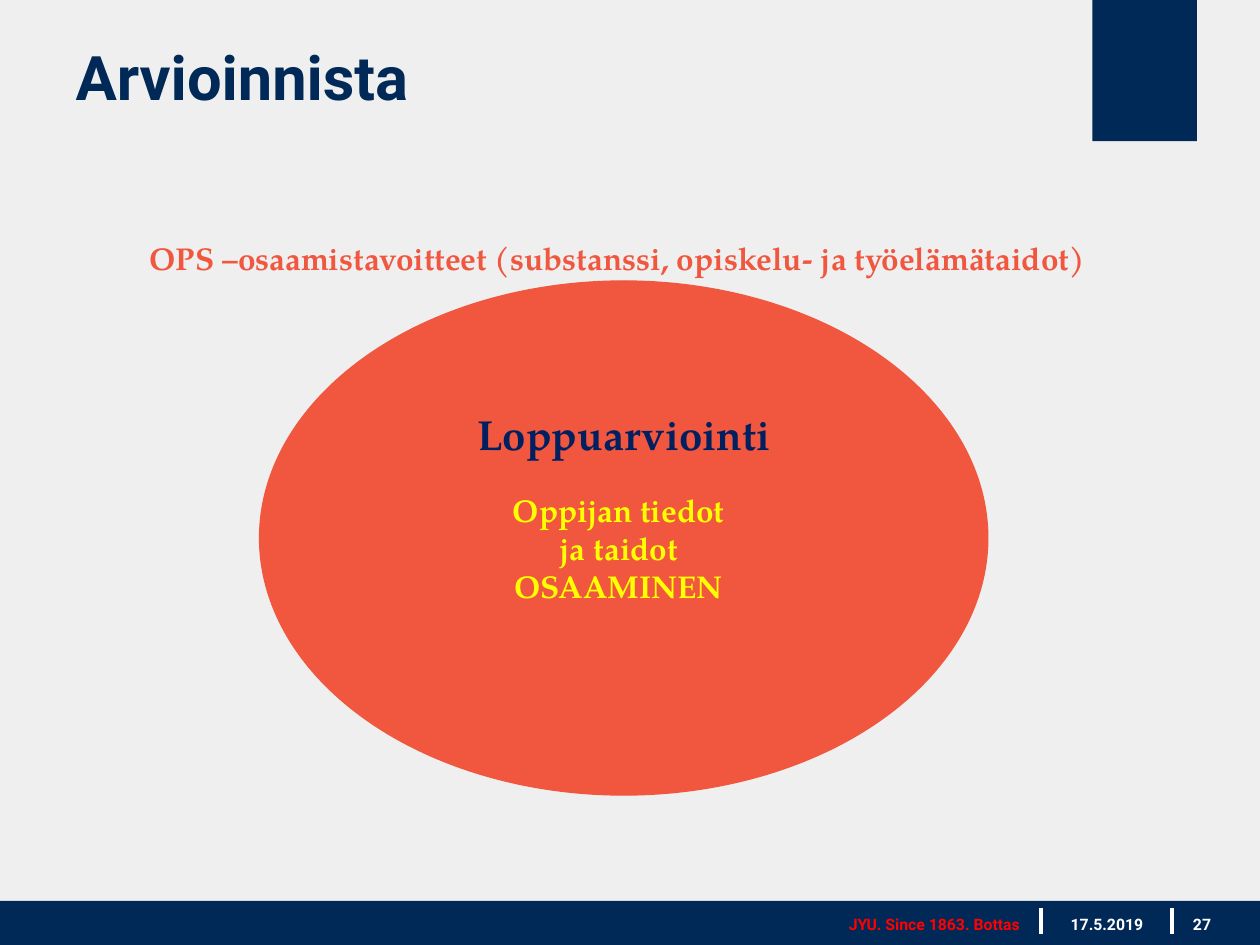
from lxml import etree
from pptx import Presentation
from pptx.dml.color import RGBColor
from pptx.enum.shapes import MSO_CONNECTOR as CONNECTOR, MSO_SHAPE as SHAPE
from pptx.enum.text import MSO_ANCHOR as ANCHOR, MSO_AUTO_SIZE as AUTO_SIZE, PP_ALIGN as ALIGN
from pptx.oxml.ns import qn
from pptx.util import Inches, Pt

WIDTH, HEIGHT = 10, 7.5
NAVY, CORAL, WHITE = "002957", "F1563F", "FFFFFF"
SANS, SERIF = "Roboto", "TeX Gyre Pagella"
FOOTER_TOP, FOOTER_HEIGHT = 7.21, 0.2
OVAL = (2.06, 2.23, 5.78, 4.08)


def color(value):
    return RGBColor.from_string(value)


def inches(box):
    return [Inches(length) for length in box]


def add_shape(slide, kind, box, fill=None, line=None):
    shape = slide.shapes.add_shape(kind, *inches(box))
    shape.shadow.inherit = False
    if fill:
        shape.fill.solid()
        shape.fill.fore_color.rgb = color(fill)
    else:
        shape.fill.background()
    if line:
        shape.line.color.rgb = color(line)
        shape.line.width = Pt(0.75)
    else:
        shape.line.fill.background()


def add_divider(slide, x):
    ends = inches((x, FOOTER_TOP, x, FOOTER_TOP + FOOTER_HEIGHT))
    connector = slide.shapes.add_connector(CONNECTOR.STRAIGHT, *ends)
    connector.line.color.rgb = color(WHITE)
    connector.line.width = Pt(2)
    etree.SubElement(connector._element.spPr, qn("a:effectLst"))


def write(frame, lines, size, font, text_color, align=ALIGN.LEFT):
    frame.word_wrap = True
    for index, line in enumerate(lines):
        paragraph = frame.add_paragraph() if index else frame.paragraphs[0]
        paragraph.alignment = align
        run = paragraph.add_run()
        run.text = line
        run.font.name = font
        run.font.size = Pt(size)
        run.font.bold = True
        run.font.color.rgb = color(text_color)


def add_text(slide, box, lines, size, font, text_color, align=ALIGN.LEFT, grow=True):
    frame = slide.shapes.add_textbox(*inches(box)).text_frame
    write(frame, lines, size, font, text_color, align)
    frame.auto_size = AUTO_SIZE.SHAPE_TO_FIT_TEXT if grow else AUTO_SIZE.NONE


def set_title(slide, box, text):
    title = slide.shapes.title
    title.left, title.top, title.width, title.height = inches(box)
    frame = title.text_frame
    write(frame, [text], 35.1, SANS, NAVY)
    frame.vertical_anchor = ANCHOR.MIDDLE
    frame.auto_size = AUTO_SIZE.NONE


def add_footer(slide):
    band = 0.35
    add_shape(slide, SHAPE.RECTANGLE, (0, HEIGHT - band, WIDTH, band), NAVY)
    for x in (8.26, 9.3):
        add_divider(slide, x)
    for left, width, text, text_color, align in (
        (5.84, 2.35, "JYU. Since 1863. Bottas", "FF0000", ALIGN.RIGHT),
        (8.33, 0.91, "17.5.2019", WHITE, ALIGN.CENTER),
        (9.37, 0.5, "27", WHITE, ALIGN.LEFT),
    ):
        box = (left, FOOTER_TOP, width, FOOTER_HEIGHT)
        add_text(slide, box, [text], 9, SANS, text_color, align, grow=False)


def main():
    presentation = Presentation()
    presentation.slide_width, presentation.slide_height = inches((WIDTH, HEIGHT))
    slide = presentation.slides.add_slide(presentation.slide_layouts[5])
    slide.background.fill.solid()
    slide.background.fill.fore_color.rgb = color("EEEFEE")

    # Page frame
    add_shape(slide, SHAPE.RECTANGLE, (8.67, 0, 0.83, 1.12), NAVY)
    add_footer(slide)
    set_title(slide, (0.5, 0.04, 8.06, 1.12), "Arvioinnista")

    # Assessment oval with its outline and texts
    add_shape(slide, SHAPE.OVAL, OVAL, fill=CORAL)
    add_text(slide, (3.95, 3.85, 1.92, 1.31), ["Oppijan tiedot ja taidot", "OSAAMINEN"],
             18, SERIF, "FFFF00", ALIGN.CENTER)
    add_shape(slide, SHAPE.OVAL, OVAL, line=CORAL)
    add_text(slide, (3.32, 3.19, 3.26, 0.5), ["Loppuarviointi"],
             24, SERIF, "002060", ALIGN.CENTER)

    # Curriculum goals above the oval
    add_text(slide, (1.09, 1.85, 8.51, 0.4),
             ["OPS –osaamistavoitteet (substanssi, opiskelu- ja työelämätaidot)"],
             18, SERIF, CORAL)

    presentation.save("out.pptx")


if __name__ == "__main__":
    main()
